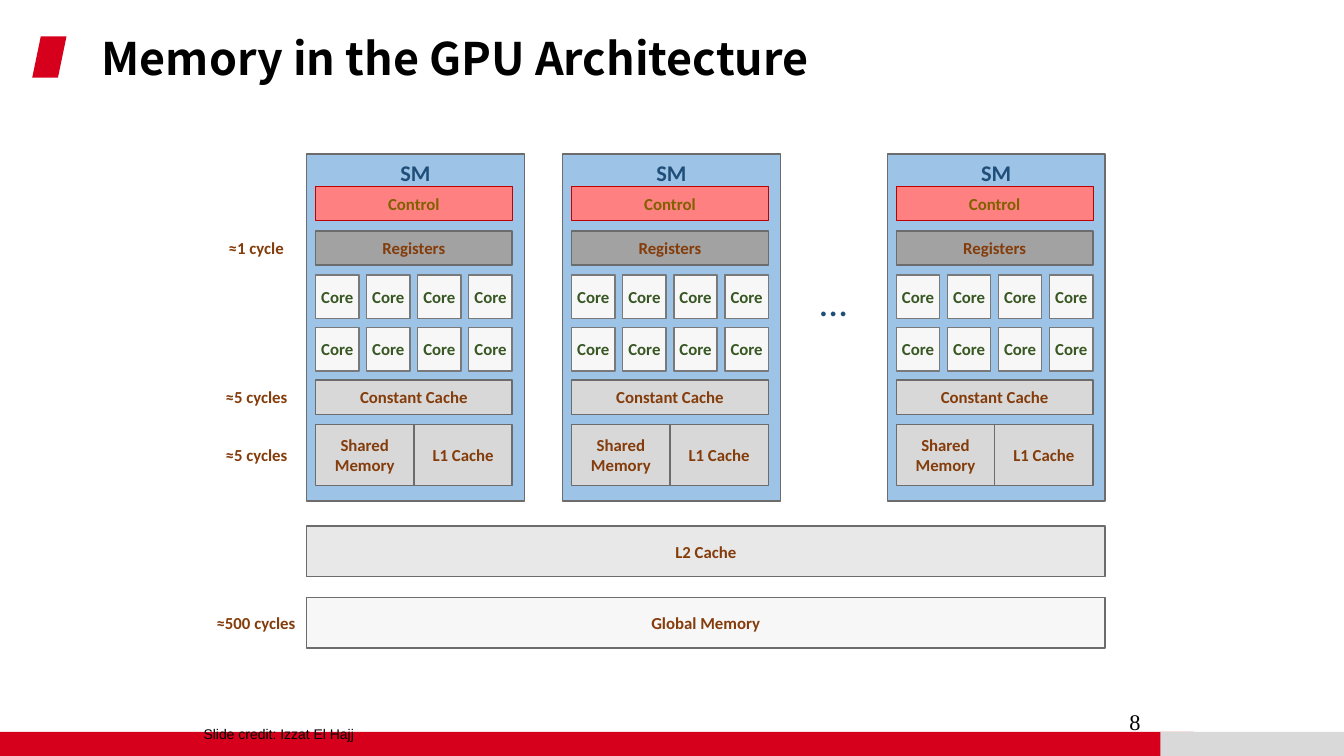
from pptx import Presentation
from pptx.dml.color import RGBColor
from pptx.enum.shapes import MSO_SHAPE
from pptx.enum.text import MSO_ANCHOR, PP_ALIGN
from pptx.util import Inches, Pt

RED = RGBColor(0xD6, 0x00, 0x1C)
FOOTER_GREY = RGBColor(0xD9, 0xD9, 0xD9)
BLACK = RGBColor(0x00, 0x00, 0x00)
SM_BLUE = RGBColor(0x9D, 0xC3, 0xE6)
NAVY = RGBColor(0x1F, 0x4E, 0x79)
CONTROL_PINK = RGBColor(0xFF, 0x80, 0x80)
CONTROL_EDGE = RGBColor(0xC0, 0x00, 0x00)
OLIVE = RGBColor(0x80, 0x60, 0x00)
GREEN = RGBColor(0x38, 0x57, 0x23)
BROWN = RGBColor(0x84, 0x3C, 0x0B)
EDGE = RGBColor(0x6C, 0x6C, 0x6C)
CORE_EDGE = RGBColor(0x79, 0x79, 0x79)
REGISTER_GREY = RGBColor(0xA2, 0xA2, 0xA2)
CACHE_GREY = RGBColor(0xD8, 0xD8, 0xD8)
L2_GREY = RGBColor(0xE8, 0xE8, 0xE8)
PALE = RGBColor(0xF7, 0xF7, 0xF7)

SM_LEFTS = (3.04, 5.58, 8.8)
SM_TOP, SM_WIDTH, SM_HEIGHT = 1.53, 2.16, 3.44
INSET, UNIT_WIDTH, UNIT_HEIGHT = 0.09, 1.95, 0.34
CORE_SIZE, CORE_TOP, CORE_ROWS, CORE_COLUMNS = 0.43, 2.73, 2, 4
CORE_STEP_X = (UNIT_WIDTH - CORE_SIZE) / (CORE_COLUMNS - 1)
CORE_STEP_Y = 0.52
MEMORY_WIDTH = SM_LEFTS[-1] + SM_WIDTH - SM_LEFTS[0]


def write(shape, text, color, size=12, font="Calibri", bold=True,
          align=PP_ALIGN.CENTER, anchor=MSO_ANCHOR.MIDDLE, wrap=True):
    frame = shape.text_frame
    frame.word_wrap = wrap
    frame.vertical_anchor = anchor
    paragraph = frame.paragraphs[0]
    paragraph.alignment = align
    run = paragraph.add_run()
    run.text = text
    run.font.color.rgb = color
    formats = {"name": font, "size": Pt(size), "bold": bold}
    for key, value in formats.items():
        setattr(run.font, key, value)


def add_block(slide, box, fill, edge=None, edge_width=1,
              kind=MSO_SHAPE.RECTANGLE):
    block = slide.shapes.add_shape(kind, *map(Inches, box))
    block.shadow.inherit = False
    block.fill.solid()
    block.fill.fore_color.rgb = fill
    if edge is None:
        block.line.fill.background()
    else:
        block.line.color.rgb = edge
        block.line.width = Pt(edge_width)
    return block


def add_unit(slide, box, text, fill, color=BROWN, edge=EDGE, edge_width=1,
             **text_format):
    write(add_block(slide, box, fill, edge, edge_width), text, color,
          **text_format)


def add_label(slide, box, text, color, **text_format):
    label = slide.shapes.add_textbox(*map(Inches, box))
    write(label, text, color, **text_format)


def add_sm(slide, left):
    add_unit(slide, (left, SM_TOP, SM_WIDTH, SM_HEIGHT), "SM", SM_BLUE, NAVY,
             size=16, anchor=MSO_ANCHOR.TOP)
    inner = left + INSET

    # Full-width units
    add_unit(slide, (inner, 1.85, UNIT_WIDTH, UNIT_HEIGHT), "Control",
             CONTROL_PINK, OLIVE, CONTROL_EDGE, 0.5)
    for top, name, fill in ((2.29, "Registers", REGISTER_GREY),
                            (3.77, "Constant Cache", CACHE_GREY)):
        add_unit(slide, (inner, top, UNIT_WIDTH, UNIT_HEIGHT), name, fill)

    # Grid of cores
    for row in range(CORE_ROWS):
        for column in range(CORE_COLUMNS):
            core = (inner + column * CORE_STEP_X, CORE_TOP + row * CORE_STEP_Y,
                    CORE_SIZE, CORE_SIZE)
            add_unit(slide, core, "Core", PALE, GREEN, CORE_EDGE, wrap=False)

    # Shared memory and L1 side by side
    half = UNIT_WIDTH / 2
    for position, name in enumerate(("Shared Memory", "L1 Cache")):
        add_unit(slide, (inner + position * half, 4.21, half, 0.61), name,
                 CACHE_GREY)


def add_frame(slide):
    add_block(slide, (0, 7.26, 11.84, 0.24), RED)
    add_block(slide, (11.51, 7.26, 1.82, 0.24), FOOTER_GREY)
    add_block(slide, (0.32, 0.36, 0.34, 0.41), RED,
              kind=MSO_SHAPE.PARALLELOGRAM)
    add_label(slide, (0.91, -0.15, 11.5, 1.45), "Memory in the GPU Architecture",
              BLACK, size=32, font="Noto Sans CJK SC", align=PP_ALIGN.LEFT)
    add_label(slide, (9.08, 6.91, 2.33, 0.5), "8", BLACK, size=16,
              font="Times New Roman", bold=False, align=PP_ALIGN.RIGHT)


def main():
    deck = Presentation()
    deck.slide_width, deck.slide_height = Inches(13.33), Inches(7.5)
    slide = deck.slides.add_slide(deck.slide_layouts[6])

    # Title and footer
    add_frame(slide)

    # Streaming multiprocessors
    for left in SM_LEFTS:
        add_sm(slide, left)
    add_label(slide, (8.03, 2.7, 0.47, 0.57), "…", NAVY, size=28, bold=False,
              anchor=MSO_ANCHOR.TOP, wrap=False)

    # Memory shared by all SMs
    for top, name, fill in ((5.22, "L2 Cache", L2_GREY),
                            (5.93, "Global Memory", PALE)):
        add_unit(slide, (SM_LEFTS[0], top, MEMORY_WIDTH, 0.5), name, fill)

    # Access latencies
    for left, top, width, latency in ((2.17, 2.31, 0.75, "≈1 cycle"),
                                      (2.14, 3.79, 0.82, "≈5 cycles"),
                                      (2.14, 4.36, 0.82, "≈5 cycles"),
                                      (2.05, 6.03, 0.99, "≈500 cycles")):
        add_label(slide, (left, top, width, 0.3), latency, BROWN,
                  align=PP_ALIGN.LEFT, anchor=MSO_ANCHOR.TOP, wrap=False)

    # Credit
    add_label(slide, (1.92, 7.15, 1.71, 0.27), "Slide credit: Izzat El Hajj",
              BLACK, size=10, font="Arial", bold=False, align=PP_ALIGN.LEFT,
              anchor=MSO_ANCHOR.TOP, wrap=False)

    deck.save("out.pptx")


if __name__ == "__main__":
    main()
